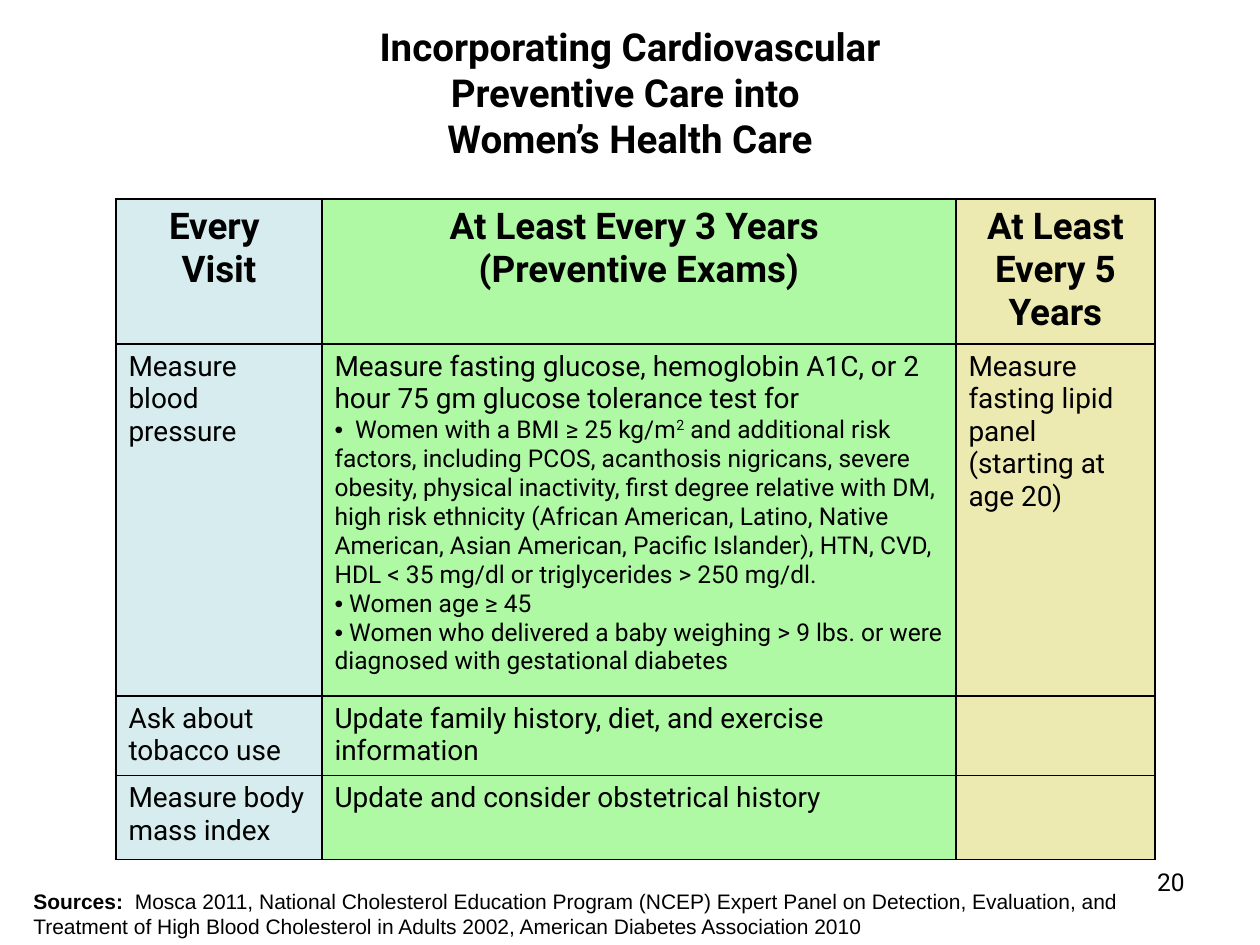
from typing import NamedTuple

from lxml.etree import SubElement
from pptx import Presentation
from pptx.dml.color import RGBColor
from pptx.enum.text import MSO_ANCHOR as Anchor, PP_ALIGN as Align
from pptx.oxml.ns import qn
from pptx.util import Pt

SCALE = 914400 / 126
BLACK = RGBColor(0, 0, 0)
BLUE = RGBColor(0xD6, 0xEC, 0xEE)
GREEN = RGBColor(0xAF, 0xF9, 0xA5)
SAND = RGBColor(0xED, 0xEA, 0xB1)


def px(n: int) -> int:
    return round(n * SCALE)


class Run(NamedTuple):
    text: str
    size: int = 16
    bold: bool = False
    face: str = "Roboto"
    raised: bool = False


class Para(NamedTuple):
    runs: list[Run]
    align: Align = Align.LEFT
    bullet: bool = False


class Column(NamedTuple):
    width: int
    fill: RGBColor
    cells: list[list[Para]]


def head(*lines: str) -> list[Para]:
    return [Para([Run(line, 21, True)], Align.CENTER) for line in lines]


def body(text: str) -> list[Para]:
    return [Para([Run(text)])]


def item(*runs: Run) -> Para:
    return Para(list(runs), bullet=True)


COLUMNS = [
    Column(206, BLUE, [
        head("Every ", "Visit"),
        body("Measure blood pressure"),
        body("Ask about tobacco use"),
        body("Measure body mass index"),
    ]),
    Column(634, GREEN, [
        head("At Least Every 3 Years ", "(Preventive Exams)"),
        body("Measure fasting glucose, hemoglobin A1C, or 2 hour 75 gm "
             "glucose tolerance test for") + [
            item(Run("  Women with a BMI ≥ 25 kg/m", 14),
                 Run("2", 14, raised=True),
                 Run(" and additional risk factors, including PCOS, acanthosis "
                     "nigricans, severe obesity, physical inactivity, first "
                     "degree relative with DM, high risk ethnicity (African "
                     "American, Latino, Native American, Asian American, "
                     "Pacific Islander), HTN, CVD, HDL < 35 mg/dl or "
                     "triglycerides > 250 mg/dl.", 14)),
            item(Run(" Women age ≥ 45", 14)),
            item(Run(" Women who delivered a baby weighing > 9 lbs. or were "
                     "diagnosed with gestational diabetes", 14)),
        ],
        body("Update family history, diet, and exercise information"),
        body("Update and consider obstetrical history"),
    ]),
    Column(199, SAND, [
        head("At Least Every 5 Years"),
        body("Measure fasting lipid panel (starting at age 20)"),
        [],
        [],
    ]),
]
ROWS = [142, 352, 77, 84]


def write(frame, paras: list[Para]) -> None:
    frame.word_wrap = True
    for i, spec in enumerate(paras):
        para = frame.paragraphs[0] if i == 0 else frame.add_paragraph()
        para.alignment = spec.align
        if spec.bullet:
            props = para._p.get_or_add_pPr()
            SubElement(props, qn("a:buFont"), typeface="Arial")
            SubElement(props, qn("a:buChar"), char="•")
        for part in spec.runs:
            run = para.add_run()
            run.text = part.text
            look = {"name": part.face, "size": Pt(part.size), "bold": part.bold}
            for key, value in look.items():
                setattr(run.font, key, value)
            run.font.color.rgb = BLACK
            if part.raised:
                run._r.get_or_add_rPr().set("baseline", "30000")


def edge(cell) -> None:
    """Draw a thin black border on all four sides; call before filling."""
    props = cell._tc.get_or_add_tcPr()
    for side in ("lnL", "lnR", "lnT", "lnB"):
        line = SubElement(props, qn(f"a:{side}"), w=str(Pt(1)))
        fill = SubElement(line, qn("a:solidFill"))
        SubElement(fill, qn("a:srgbClr"), val=str(BLACK))


def add_text(slide, box: tuple[int, int, int, int], para: Para) -> None:
    write(slide.shapes.add_textbox(*map(px, box)).text_frame, [para])


def add_title(slide) -> None:
    title = slide.shapes.title
    place = {"left": 320, "top": 32, "width": 620, "height": 136}
    for key, value in place.items():
        setattr(title, key, px(value))
    frame = title.text_frame
    frame.vertical_anchor = Anchor.BOTTOM
    para = Para([Run("Incorporating Cardiovascular Preventive Care into ", 22, True)],
                Align.CENTER)
    write(frame, [para])
    first = frame.paragraphs[0]
    first.add_line_break()
    run = first.add_run()
    run.text = "Women’s Health Care"
    look = {"name": "Roboto", "size": Pt(22), "bold": True}
    for key, value in look.items():
        setattr(run.font, key, value)
    run.font.color.rgb = BLACK


def add_grid(slide) -> None:
    width = sum(col.width for col in COLUMNS)
    box = map(px, (116, 199, width, sum(ROWS)))
    grid = slide.shapes.add_table(len(ROWS), len(COLUMNS), *box).table
    grid.first_row = grid.horz_banding = False
    for row, high in zip(grid.rows, ROWS):
        row.height = px(high)
    for c, col in enumerate(COLUMNS):
        grid.columns[c].width = px(col.width)
        for r, paras in enumerate(col.cells):
            cell = grid.cell(r, c)
            edge(cell)
            cell.fill.solid()
            cell.fill.fore_color.rgb = col.fill
            write(cell.text_frame, paras)


def main() -> None:
    deck = Presentation()
    deck.slide_width, deck.slide_height = px(1260), px(945)
    slide = deck.slides.add_slide(deck.slide_layouts[5])
    add_title(slide)
    add_text(slide, (903, 861, 294, 66), Para([Run("20", 14)], Align.RIGHT))
    add_grid(slide)
    add_text(slide, (21, 882, 1134, 63), Para([
        Run("Sources:  ", 12, True, "Arial"),
        Run("Mosca 2011, National Cholesterol Education Program (NCEP) Expert "
            "Panel on Detection, Evaluation, and Treatment of High Blood "
            "Cholesterol in Adults 2002, American Diabetes Association 2010",
            12, face="Arial"),
    ]))
    deck.save("out.pptx")


if __name__ == "__main__":
    main()
